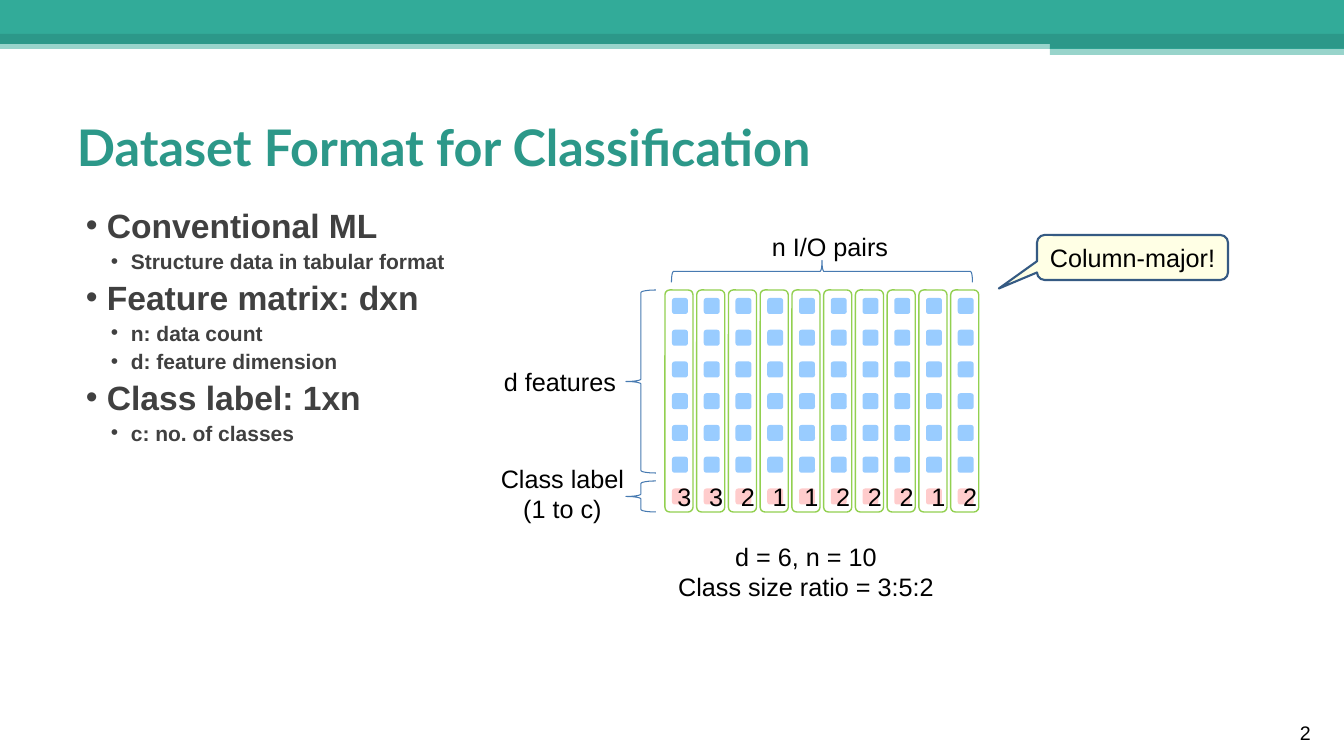
from lxml.etree import SubElement
from pptx import Presentation
from pptx.dml.color import RGBColor
from pptx.enum.shapes import MSO_SHAPE as Shape
from pptx.enum.text import MSO_ANCHOR as Anchor, MSO_AUTO_SIZE as AutoSize, PP_ALIGN as Align
from pptx.oxml.ns import qn
from pptx.util import Pt

# Content
TITLE = "Dataset Format for Classification"
BULLETS = [
    (0, "Conventional ML"),
    (1, "Structure data in tabular format"),
    (0, "Feature matrix: dxn"),
    (1, "n: data count"),
    (1, "d: feature dimension"),
    (0, "Class label: 1xn"),
    (1, "c: no. of classes"),
]
CLASS_LABELS = [3, 3, 2, 1, 1, 2, 2, 2, 1, 2]
FEATURES = 6
CALLOUT = "Column-major!"
PAGE = "2"

# Boxes are left, top, width, height in px
CAPTIONS = [
    (["d features"], (491, 361, 138, 40)),
    (["Class label", "(1 to c)"], (490, 458, 145, 72)),
    (["n I/O pairs"], (759, 226, 142, 40)),
    (["d = 6, n = 10", "Class size ratio = 3:5:2"], (667, 536, 278, 72)),
]
BRACES = [
    ((626, 290, 30, 183), 0),
    ((626, 481, 30, 31), 0),
    ((811, 121, 22, 301), 90),
]
BANNER = [
    ((0, 40, 1344, 9), "teal", 50),
    ((0, 0, 1344, 34), "teal", 100),
    ((0, 34, 1344, 10), "deep_teal", 100),
    ((1050, 39, 294, 10), "deep_teal", 100),
    ((1050, 48, 294, 7), "teal", 50),
]
INDENTS = [(30, -21), (54, -20)]
GRID_LEFT, GRID_TOP, PITCH, CELL = 672, 298, 31.75, 16
COLUMN_WIDTH, COLUMN_HEIGHT, COLUMN_PAD = 28, 222, 7

THEME = {
    "color": {
        "teal": "32AB99", "deep_teal": "2C9889", "body": "404040", "ink": "000000",
        "feature": "99CCFF", "label": "FFCCCC", "column": "92D050",
        "brace": "477AB1", "note": "FFFFCC", "note_line": "355A83",
    },
    "size": {"title": 36, "bullets": (24, 15), "caption": 18, "page": 14},
    "font": {"title": "Lato", "text": "Arial"},
}
SIZE, FONT = THEME["size"], THEME["font"]
CAPTION = {"size": Pt(SIZE["caption"]), "name": FONT["text"]}
EMU_PER_PX = 914400 / 100.8


def px(n):
    return round(n * EMU_PER_PX)


def color(name):
    return RGBColor.from_string(THEME["color"][name])


def add_shape(kind, box, fill=None, alpha=100, line=None, width=1):
    sp = slide.shapes.add_shape(kind, *map(px, box))
    sp.shadow.inherit = False
    if fill:
        sp.fill.solid()
        sp.fill.fore_color.rgb = color(fill)
        if alpha < 100:
            clr = sp.fill._xPr.find(qn("a:solidFill"))[0]
            SubElement(clr, qn("a:alpha"), val=str(alpha * 1000))
    else:
        sp.fill.background()
    if line:
        sp.line.color.rgb = color(line)
        sp.line.width = Pt(width)
    else:
        sp.line.fill.background()
    return sp


def write(p, text, ink, style):
    r = p.add_run()
    r.text = text
    for name, value in style.items():
        setattr(r.font, name, value)
    r.font.color.rgb = color(ink)


def set_text(sp, lines, ink="ink", style=CAPTION, align=Align.CENTER, **frame):
    tf = sp.text_frame
    for name, value in frame.items():
        setattr(tf, name, value)
    for i, line in enumerate(lines):
        p = tf.add_paragraph() if i else tf.paragraphs[0]
        p.alignment = align
        write(p, line, ink, style)


def add_text(box, lines, **options):
    set_text(slide.shapes.add_textbox(*map(px, box)), lines, **options)


def add_bullets(box):
    tf = slide.shapes.add_textbox(*map(px, box)).text_frame
    tf.word_wrap = True
    for i, (level, text) in enumerate(BULLETS):
        p = tf.add_paragraph() if i else tf.paragraphs[0]
        p.level = level
        p.space_before = Pt(2.2 if i else 0)
        pPr = p._p.get_or_add_pPr()
        for name, length in zip(("marL", "indent"), INDENTS[level]):
            pPr.set(name, str(px(length)))
        clr = SubElement(pPr, qn("a:buClr"))
        SubElement(clr, qn("a:srgbClr"), val=THEME["color"]["body"])
        SubElement(pPr, qn("a:buFont"), typeface=FONT["text"])
        SubElement(pPr, qn("a:buChar"), char="•")
        write(p, text, "body",
              {"size": Pt(SIZE["bullets"][level]), "name": FONT["text"], "bold": True})


prs = Presentation()
prs.slide_width, prs.slide_height = px(1344), px(756)
slide = prs.slides.add_slide(prs.slide_layouts[6])

# Banner, title, bullets and page number
for box, fill, alpha in BANNER:
    add_shape(Shape.RECTANGLE, box, fill, alpha)
add_text((67, 103, 1210, 87), [TITLE], ink="deep_teal", align=Align.LEFT,
         style={"size": Pt(SIZE["title"]), "name": FONT["title"], "bold": True},
         word_wrap=True, vertical_anchor=Anchor.MIDDLE)
add_bullets((67, 200, 1210, 485))
add_text((1290, 716, 40, 30), [PAGE], align=Align.LEFT,
         style={"size": Pt(SIZE["page"]), "name": FONT["text"]}, word_wrap=True)

# Data matrix: feature cells, then the class label of each column
for col, label in enumerate(CLASS_LABELS):
    x = GRID_LEFT + col * PITCH
    for row in range(FEATURES):
        add_shape(Shape.ROUNDED_RECTANGLE, (x, GRID_TOP + row * PITCH, CELL, CELL), "feature")
    sp = add_shape(Shape.ROUNDED_RECTANGLE,
                   (x, GRID_TOP + FEATURES * PITCH, CELL, CELL), "label")
    set_text(sp, [str(label)], word_wrap=True, vertical_anchor=Anchor.MIDDLE)
    add_shape(Shape.ROUNDED_RECTANGLE,
              (x - COLUMN_PAD, GRID_TOP - COLUMN_PAD - 1, COLUMN_WIDTH, COLUMN_HEIGHT),
              line="column")

# Braces and captions
for box, angle in BRACES:
    add_shape(Shape.LEFT_BRACE, box, line="brace", width=0.75).rotation = angle
for lines, box in CAPTIONS:
    add_text(box, lines, word_wrap=False, auto_size=AutoSize.SHAPE_TO_FIT_TEXT)

# Callout
sp = add_shape(Shape.ROUNDED_RECTANGULAR_CALLOUT, (1037, 235, 191, 45),
               "note", 50, "note_line", 1.5)
for i, value in enumerate((-0.7, 0.69, 0.17)):
    sp.adjustments[i] = value
set_text(sp, [CALLOUT], word_wrap=False, vertical_anchor=Anchor.MIDDLE,
         auto_size=AutoSize.SHAPE_TO_FIT_TEXT)

prs.save("out.pptx")
